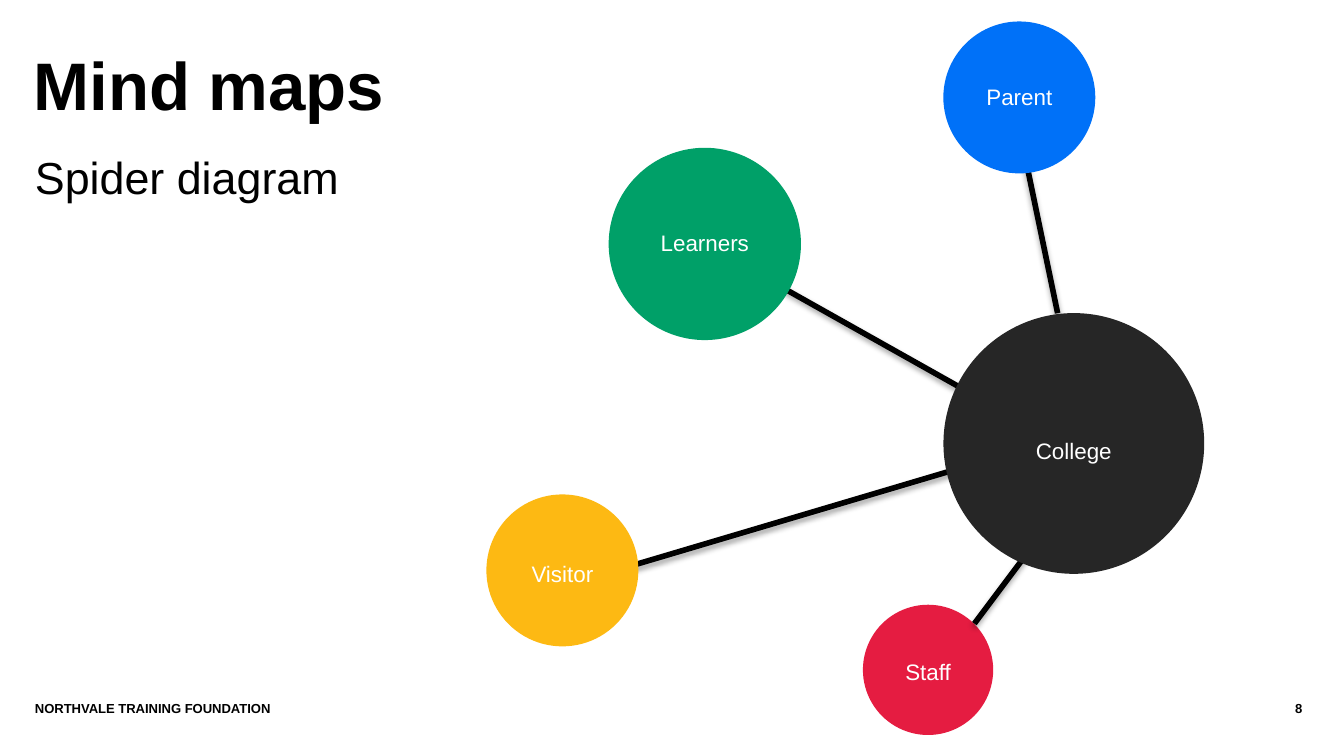
from lxml import etree
from pptx import Presentation
from pptx.dml.color import RGBColor
from pptx.enum.shapes import MSO_CONNECTOR, MSO_SHAPE
from pptx.enum.text import PP_ALIGN
from pptx.oxml.ns import qn
from pptx.util import Pt

OVAL = MSO_SHAPE.OVAL
STRAIGHT = MSO_CONNECTOR.STRAIGHT
LEFT, CENTER, RIGHT = PP_ALIGN.LEFT, PP_ALIGN.CENTER, PP_ALIGN.RIGHT

FONT = "Arial"
BLACK, WHITE = "000000", "FFFFFF"
LABEL_HEIGHT = 14.4

HEADINGS = [
    ("Mind maps", (18, 19.4, 664.6, 54.7), dict(size=36, bold=True, inset_top=3.7)),
    ("Spider diagram", (18.7, 77.8, 604.1, 283.7), dict(size=24, inset_top=2.3)),
]
FOOTERS = [
    ("NORTHVALE TRAINING FOUNDATION", (18.7, 375.1, 605.5, 21.6), dict(size=7, bold=True)),
    ("8", (626.4, 375.1, 71.3, 21.6), dict(size=7, bold=True, align=RIGHT)),
]

# name, centre x, centre y, diameter, colour, label width, label drop
HUB = ("College", 575.3, 237.6, 139.7, "262626", 91.4, 3.6)
BRANCHES = [
    ("Learners", 377.6, 130.7, 103, "00A068", 70.6, -1),
    ("Parent", 546.1, 52.2, 81.4, "0071F8", 70.6, -0.4),
    ("Staff", 497.2, 358.9, 69.8, "E51C41", 70.6, 1),
    ("Visitor", 301.3, 305.6, 81.4, "FDB913", 70.6, 1.8),
]
BACK_SPOKES = [
    (524.9, 247.7, 321.1, 308.2),
    (414, 151.2, 519.1, 210.2),
    (549.4, 85, 566.6, 167.8),
]
STAFF_SPOKE = (560.9, 282.2, 522, 334.1)


def color(value):
    return RGBColor.from_string(value)


def add_text(slide, text, box, *, size, ink=BLACK, bold=False, align=LEFT, inset_top=0):
    frame = slide.shapes.add_textbox(*map(Pt, box)).text_frame
    frame.word_wrap = True
    frame.margin_left = frame.margin_right = frame.margin_bottom = 0
    frame.margin_top = Pt(inset_top)
    paragraph = frame.paragraphs[0]
    paragraph.alignment = align
    run = paragraph.add_run()
    run.text = text
    run.font.name = FONT
    run.font.size = Pt(size)
    run.font.bold = bold
    run.font.color.rgb = color(ink)


def add_spoke(slide, ends):
    spoke = slide.shapes.add_connector(STRAIGHT, *map(Pt, ends))
    spoke.line.color.rgb = color(BLACK)
    spoke.line.width = Pt(3)
    effects = etree.SubElement(spoke._element.spPr, qn("a:effectLst"))
    shadow = etree.SubElement(effects, qn("a:outerShdw"), blurRad=str(Pt(3.1)),
                              dist=str(Pt(1.8)), dir="5400000", rotWithShape="0")
    tint = etree.SubElement(shadow, qn("a:srgbClr"), val=BLACK)
    etree.SubElement(tint, qn("a:alpha"), val="35000")


def add_circle(slide, node):
    _, x, y, diameter, fill, _, _ = node
    box = (x - diameter / 2, y - diameter / 2, diameter, diameter)
    circle = slide.shapes.add_shape(OVAL, *map(Pt, box))
    circle.shadow.inherit = False
    circle.fill.solid()
    circle.fill.fore_color.rgb = color(fill)
    circle.line.fill.background()


def add_label(slide, node):
    name, x, y, _, _, width, drop = node
    box = (x - width / 2, y - LABEL_HEIGHT / 2 + drop, width, LABEL_HEIGHT)
    add_text(slide, name, box, size=12, ink=WHITE, align=CENTER)


def main():
    deck = Presentation()
    deck.slide_width, deck.slide_height = Pt(720), Pt(405)
    slide = deck.slides.add_slide(deck.slide_layouts[6])

    for text, box, style in HEADINGS:
        add_text(slide, text, box, **style)
    for ends in BACK_SPOKES:
        add_spoke(slide, ends)
    for node in BRANCHES:
        add_circle(slide, node)
    add_spoke(slide, STAFF_SPOKE)
    add_circle(slide, HUB)
    for node in [HUB, *BRANCHES]:
        add_label(slide, node)
    for text, box, style in FOOTERS:
        add_text(slide, text, box, **style)

    deck.save("out.pptx")


if __name__ == "__main__":
    main()
